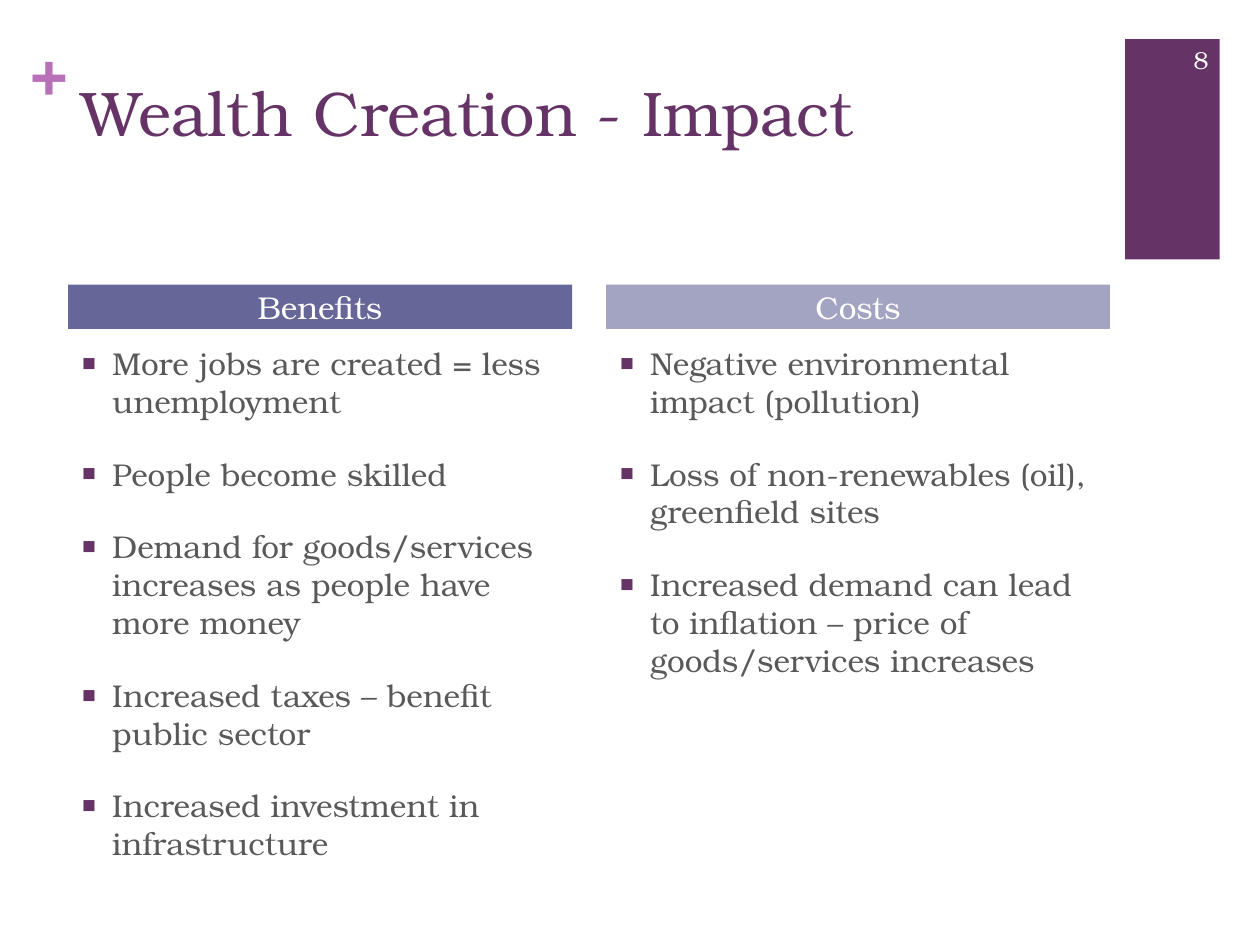
from dataclasses import dataclass

from lxml.etree import SubElement
from pptx import Presentation
from pptx.dml.color import RGBColor
from pptx.enum.shapes import MSO_SHAPE as Shape
from pptx.enum.text import MSO_ANCHOR as Anchor, MSO_AUTO_SIZE as AutoSize, PP_ALIGN as Align
from pptx.oxml.ns import qn
from pptx.slide import Slide
from pptx.util import Inches, Pt

PLUM, ORCHID, INDIGO, LAVENDER = "663366", "B870B8", "666699", "A3A3C2"
GREY, WHITE = "595959", "FFFFFF"
COMPARISON_LAYOUT = 4
COLUMN_LEFTS = (2.16, 19.24)
COLUMN_WIDTH = 16

TOPICS = [
    ("Benefits", INDIGO, [
        "More jobs are created = less unemployment",
        "People become skilled",
        "Demand for goods/services increases as people have more money",
        "Increased taxes – benefit public sector",
        "Increased investment in infrastructure",
    ]),
    ("Costs", LAVENDER, [
        "Negative environmental impact (pollution)",
        "Loss of non-renewables (oil), greenfield sites",
        "Increased demand can lead to inflation – price of goods/services increases",
    ]),
]


def color(value):
    return RGBColor.from_string(value)


def assign(target, values):
    for name, value in values.items():
        setattr(target, name, value)


@dataclass
class Deck:
    """Draws on a slide with a grid of 40 columns and 30 rows."""
    slide: Slide
    font: str = "TeX Gyre Bonum"
    cell: float = 0.25

    def place(self, element, area):
        sides = ("left", "top", "width", "height")
        assign(element, {side: Inches(n * self.cell) for side, n in zip(sides, area)})

    def fill_text(self, element, lines, size, ink, align=Align.LEFT, bold=False,
                  gap=0, bullet=None, **frame_format):
        frame = element.text_frame
        frame.text = "\n".join(lines)
        assign(frame, {"auto_size": AutoSize.NONE, "word_wrap": True,
                       "vertical_anchor": Anchor.TOP, **frame_format})
        for index, paragraph in enumerate(frame.paragraphs):
            self.mark(paragraph, bullet)
            assign(paragraph, {"alignment": align, "space_before": Pt(gap if index else 0)})
            assign(paragraph.font, {"name": self.font, "size": Pt(size), "bold": bold})
            paragraph.font.color.rgb = color(ink)

    def mark(self, paragraph, bullet):
        """Set the bullet colour and hanging indent, or remove both."""
        properties = paragraph._p.get_or_add_pPr()
        indent = Inches(self.cell) if bullet else 0
        properties.set("marL", str(indent))
        properties.set("indent", str(-indent))
        if not bullet:
            SubElement(properties, qn("a:buNone"))
            return
        tint = SubElement(properties, qn("a:buClr"))
        SubElement(tint, qn("a:srgbClr"), val=bullet)
        SubElement(properties, qn("a:buSzPct"), val="75000")
        SubElement(properties, qn("a:buFont"), typeface=self.font)
        SubElement(properties, qn("a:buChar"), char="■")

    def block(self, area, fill):
        shape = self.slide.shapes.add_shape(Shape.RECTANGLE, 0, 0, 0, 0)
        self.place(shape, area)
        shape.shadow.inherit = False
        shape.fill.solid()
        shape.fill.fore_color.rgb = color(fill)
        shape.line.fill.background()

    def label(self, area, text, size, ink, **style):
        box = self.slide.shapes.add_textbox(0, 0, 0, 0)
        self.place(box, area)
        self.fill_text(box, [text], size, ink, **style)

    def title(self, area, text):
        heading = self.slide.shapes.title
        self.place(heading, area)
        self.fill_text(heading, [text], 36, PLUM)

    def heading(self, slot, area, text, fill):
        bar = self.slide.placeholders[slot]
        self.place(bar, area)
        bar.fill.solid()
        bar.fill.fore_color.rgb = color(fill)
        self.fill_text(bar, [text], 18, WHITE, align=Align.CENTER,
                       vertical_anchor=Anchor.MIDDLE, margin_top=0, margin_bottom=0)

    def points(self, slot, area, lines):
        body = self.slide.placeholders[slot]
        self.place(body, area)
        self.fill_text(body, lines, 18, GREY, gap=20, bullet=PLUM)


def main():
    presentation = Presentation()
    assign(presentation, {"slide_width": Inches(10), "slide_height": Inches(7.5)})
    layout = presentation.slide_layouts[COMPARISON_LAYOUT]
    deck = Deck(presentation.slides.add_slide(layout))

    deck.block((35.72, 1.24, 3, 7), PLUM)
    no_margins = {f"margin_{side}": 0 for side in ("left", "top", "right", "bottom")}
    deck.label((0.96, 1, 1.12, 2.44), "+", 36, ORCHID, bold=True,
               **{**no_margins, "word_wrap": False})
    deck.title((2.2, 2.12, 33.04, 4.88), "Wealth Creation - Impact")
    for index, (left, (name, fill, lines)) in enumerate(zip(COLUMN_LEFTS, TOPICS)):
        slot = 1 + 2 * index
        deck.heading(slot, (left, 9.04, COLUMN_WIDTH, 1.4), name, fill)
        deck.points(slot + 1, (left, 10.72, COLUMN_WIDTH, 16.08), lines)
    deck.label((36.32, 1.08, 2.44, 1.6), "8", 14, WHITE, align=Align.RIGHT,
               vertical_anchor=Anchor.MIDDLE)
    presentation.save("out.pptx")


if __name__ == "__main__":
    main()
